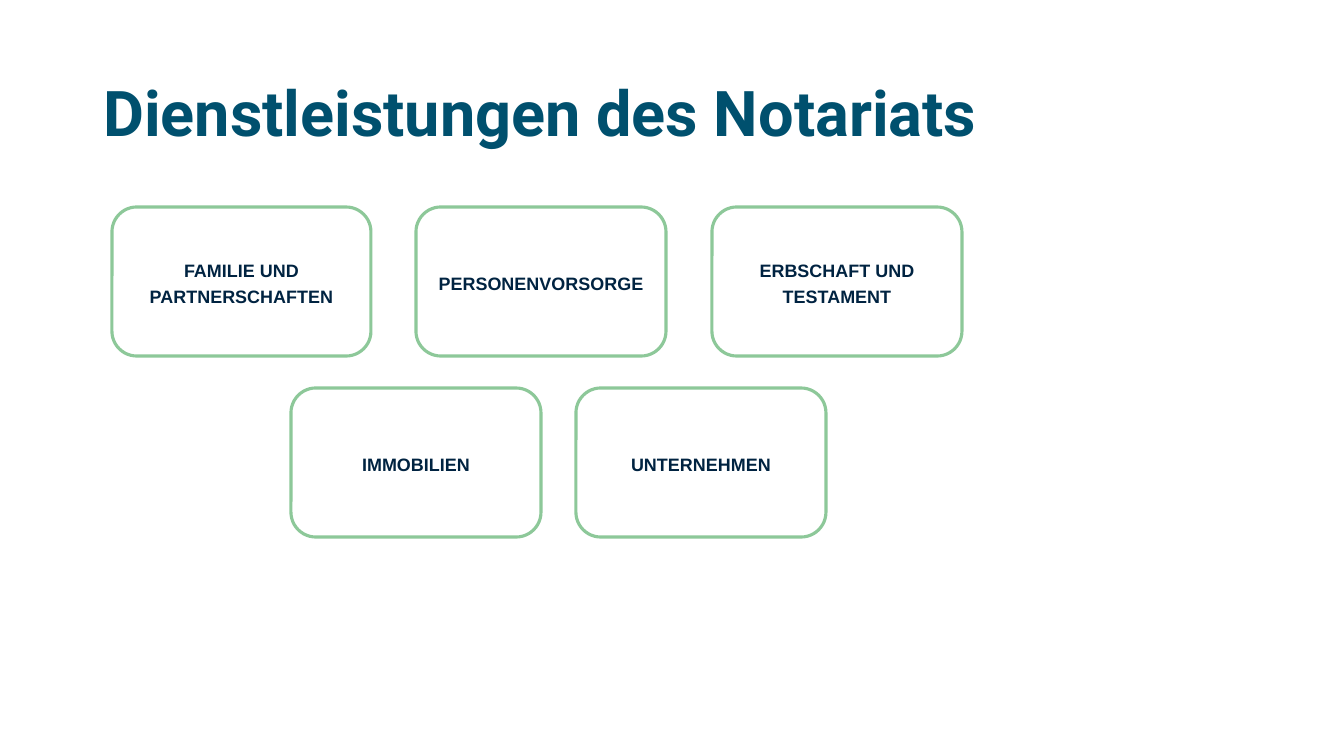
import pptx
import pptx.util
import pptx.dml.color
import pptx.enum.shapes
import pptx.enum.text

PX = 914400 / 100.8
COLORS = {"title": "00506E", "text": "002341", "border": "8DC899", "fill": "FFFFFF"}


def px(*lengths):
    return [pptx.util.Emu(round(n * PX)) for n in lengths]


def format_run(r, font, size, color):
    r.font.name = font
    r.font.size = pptx.util.Pt(size)
    r.font.bold = True
    r.font.color.rgb = pptx.dml.color.RGBColor.from_string(COLORS[color])


prs = pptx.Presentation()
prs.slide_width, prs.slide_height = px(1344, 756)
s = prs.slides.add_slide(prs.slide_layouts[5])

title = s.shapes.title
title.left, title.top, title.width, title.height = px(93, 77, 1030, 152)
tf = title.text_frame
tf.text = "Dienstleistungen des Notariats"
tf.word_wrap = True
tf.auto_size = pptx.enum.text.MSO_AUTO_SIZE.NONE
tf.vertical_anchor = pptx.enum.text.MSO_ANCHOR.TOP
p = tf.paragraphs[0]
p.alignment = pptx.enum.text.PP_ALIGN.LEFT
p.line_spacing = 0.9
format_run(p.runs[0], "Roboto", 45, "title")

services = [
    ("familie und partnerschaften", 112, 207, 259),
    ("personenvorsorge", 416, 207, 250),
    ("erbschaft und testament", 712, 207, 250),
    ("immobilien", 291, 388, 250),
    ("unternehmen", 576, 388, 250),
]
for text, left, top, width in services:
    sp = s.shapes.add_shape(
        pptx.enum.shapes.MSO_SHAPE.ROUNDED_RECTANGLE, *px(left, top, width, 149)
    )
    sp.shadow.inherit = False
    sp.fill.solid()
    sp.fill.fore_color.rgb = pptx.dml.color.RGBColor.from_string(COLORS["fill"])
    sp.line.color.rgb = pptx.dml.color.RGBColor.from_string(COLORS["border"])
    sp.line.width = pptx.util.Pt(2.25)
    tf = sp.text_frame
    tf.text = text
    tf.word_wrap = True
    tf.vertical_anchor = pptx.enum.text.MSO_ANCHOR.MIDDLE
    p = tf.paragraphs[0]
    p.alignment = pptx.enum.text.PP_ALIGN.CENTER
    r = p.runs[0]
    format_run(r, "Arial", 16, "text")
    r._r.get_or_add_rPr().set("cap", "small")

prs.save("out.pptx")
